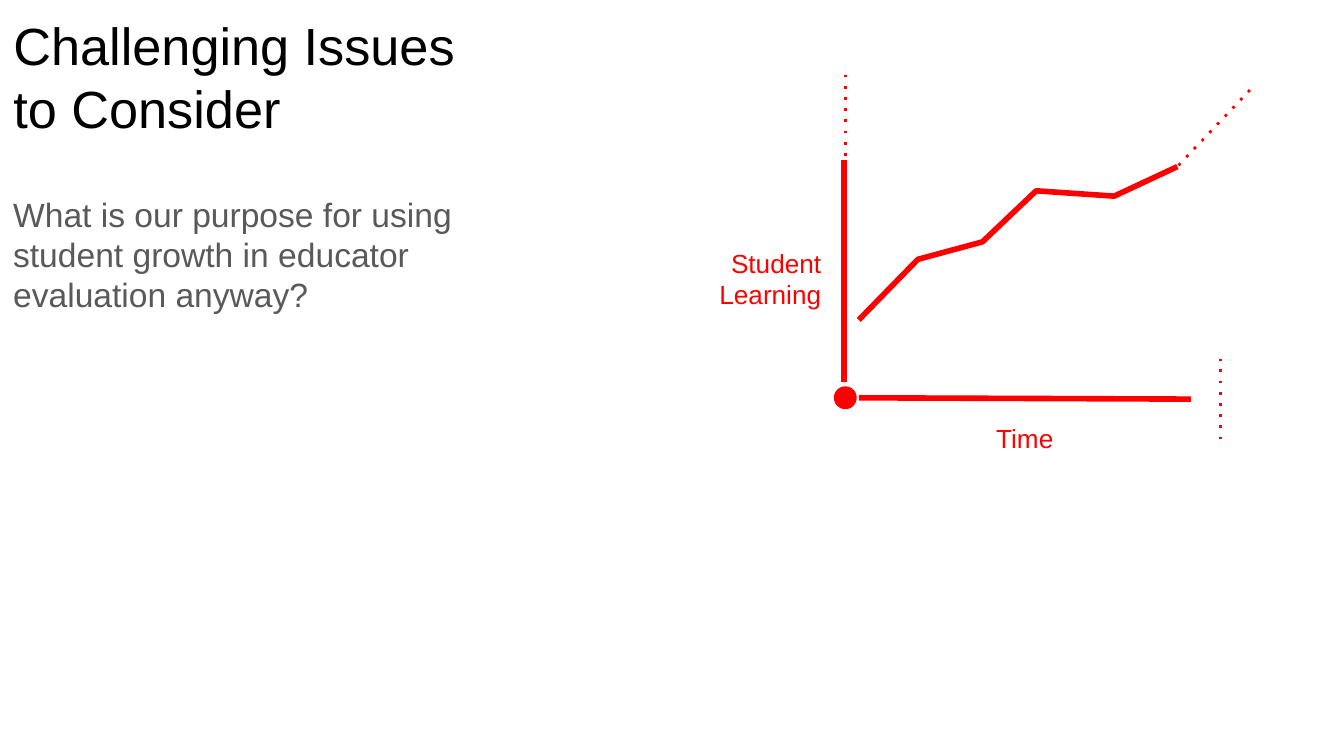
from dataclasses import dataclass

from lxml import etree
from pptx import Presentation
from pptx.dml.color import RGBColor
from pptx.enum.shapes import MSO_CONNECTOR, MSO_SHAPE
from pptx.enum.text import MSO_ANCHOR, MSO_AUTO_SIZE, PP_ALIGN
from pptx.oxml.ns import qn
from pptx.util import Pt

STRAIGHT = MSO_CONNECTOR.STRAIGHT
OVAL = MSO_SHAPE.OVAL
TOP, MIDDLE = MSO_ANCHOR.TOP, MSO_ANCHOR.MIDDLE
LEFT, CENTER, RIGHT = PP_ALIGN.LEFT, PP_ALIGN.CENTER, PP_ALIGN.RIGHT
FIXED = MSO_AUTO_SIZE.NONE
PX = 9144
SLIDE_W = 1000 * PX
SLIDE_H = SLIDE_W * 9 // 16
INSET = 10


@dataclass(frozen=True)
class Theme:
    font: str = "Arial"
    ink: RGBColor = RGBColor(0, 0, 0)
    muted: RGBColor = RGBColor(0x59, 0x59, 0x59)
    accent: RGBColor = RGBColor(0xFF, 0, 0)
    title: int = 28
    body: int = 18
    label: int = 14
    solid: float = 3
    dotted: float = 1.5
    outline: float = 0.75


@dataclass(frozen=True)
class Box:
    x: int
    y: int
    w: int
    h: int

    def emu(self) -> list[int]:
        return [v * PX for v in (self.x, self.y, self.w, self.h)]


@dataclass(frozen=True)
class Stroke:
    x1: int
    y1: int
    x2: int
    y2: int
    dotted: bool = False


@dataclass(frozen=True)
class Label:
    text: str
    box: Box
    align: PP_ALIGN
    anchor: MSO_ANCHOR


THEME = Theme()

AXES = [Stroke(639, 296, 886, 297), Stroke(628, 284, 628, 119)]
EXTENSIONS = [
    Stroke(629, 116, 629, 56, dotted=True),
    Stroke(908, 327, 908, 267, dotted=True),
    Stroke(930, 67, 875, 125, dotted=True),
]
LABELS = [
    Label("Time", Box(639, 304, 247, 52), CENTER, TOP),
    Label("Student\nLearning", Box(506, 119, 115, 177), RIGHT, MIDDLE),
]
ORIGIN = Box(621, 288, 16, 16)
GROWTH = [(639, 238), (683, 193), (731, 180), (771, 142), (829, 146), (876, 124)]


def set_text(sp, text: str, *, size: int, color: RGBColor,
             align: PP_ALIGN = LEFT, anchor: MSO_ANCHOR = TOP) -> None:
    tf = sp.text_frame
    tf.text = text
    tf.word_wrap = True
    tf.auto_size = FIXED
    tf.vertical_anchor = anchor
    tf.margin_left = tf.margin_right = tf.margin_top = tf.margin_bottom = INSET * PX
    for p in tf.paragraphs:
        p.alignment = align
        for r in p.runs:
            r.font.name = THEME.font
            r.font.size = Pt(size)
            r.font.color.rgb = color


def add_stroke(shapes, stroke: Stroke) -> None:
    ends = (v * PX for v in (stroke.x1, stroke.y1, stroke.x2, stroke.y2))
    sp = shapes.add_connector(STRAIGHT, *ends)
    sp.line.color.rgb = THEME.accent
    sp.line.width = Pt(THEME.dotted if stroke.dotted else THEME.solid)
    props = sp._element.spPr
    if stroke.dotted:
        etree.SubElement(props.find(qn("a:ln")), qn("a:prstDash"), val="dot")
    etree.SubElement(props, qn("a:effectLst"))


def add_label(shapes, label: Label) -> None:
    sp = shapes.add_textbox(*label.box.emu())
    set_text(sp, label.text, size=THEME.label, color=THEME.accent,
             align=label.align, anchor=label.anchor)


def add_origin(shapes, box: Box) -> None:
    sp = shapes.add_shape(OVAL, *box.emu())
    sp.shadow.inherit = False
    sp.fill.solid()
    sp.fill.fore_color.rgb = THEME.accent
    sp.line.color.rgb = THEME.accent
    sp.line.width = Pt(THEME.outline)


def add_curve(shapes, points: list[tuple[int, int]]) -> None:
    builder = shapes.build_freeform(*points[0], scale=PX)
    builder.add_line_segments(points[1:], close=False)
    sp = builder.convert_to_shape()
    sp.shadow.inherit = False
    sp.fill.background()
    sp.line.color.rgb = THEME.accent
    sp.line.width = Pt(THEME.solid)


def main() -> None:
    prs = Presentation()
    prs.slide_width, prs.slide_height = SLIDE_W, SLIDE_H
    s = prs.slides.add_slide(prs.slide_layouts[5])

    title = s.shapes.title
    title.left, title.top, title.width, title.height = Box(0, 0, 379, 63).emu()
    set_text(title, "Challenging Issues to Consider", size=THEME.title, color=THEME.ink)

    question = s.shapes.add_textbox(*Box(0, 134, 384, 115).emu())
    set_text(question,
             "What is our purpose for using student growth in educator evaluation anyway?",
             size=THEME.body, color=THEME.muted)

    graph = s.shapes.add_group_shape().shapes
    for stroke in AXES:
        add_stroke(graph, stroke)
    add_origin(graph, ORIGIN)
    for label in LABELS:
        add_label(graph, label)
    add_curve(graph, GROWTH)
    for stroke in EXTENSIONS:
        add_stroke(graph, stroke)

    prs.save("out.pptx")


if __name__ == "__main__":
    main()
